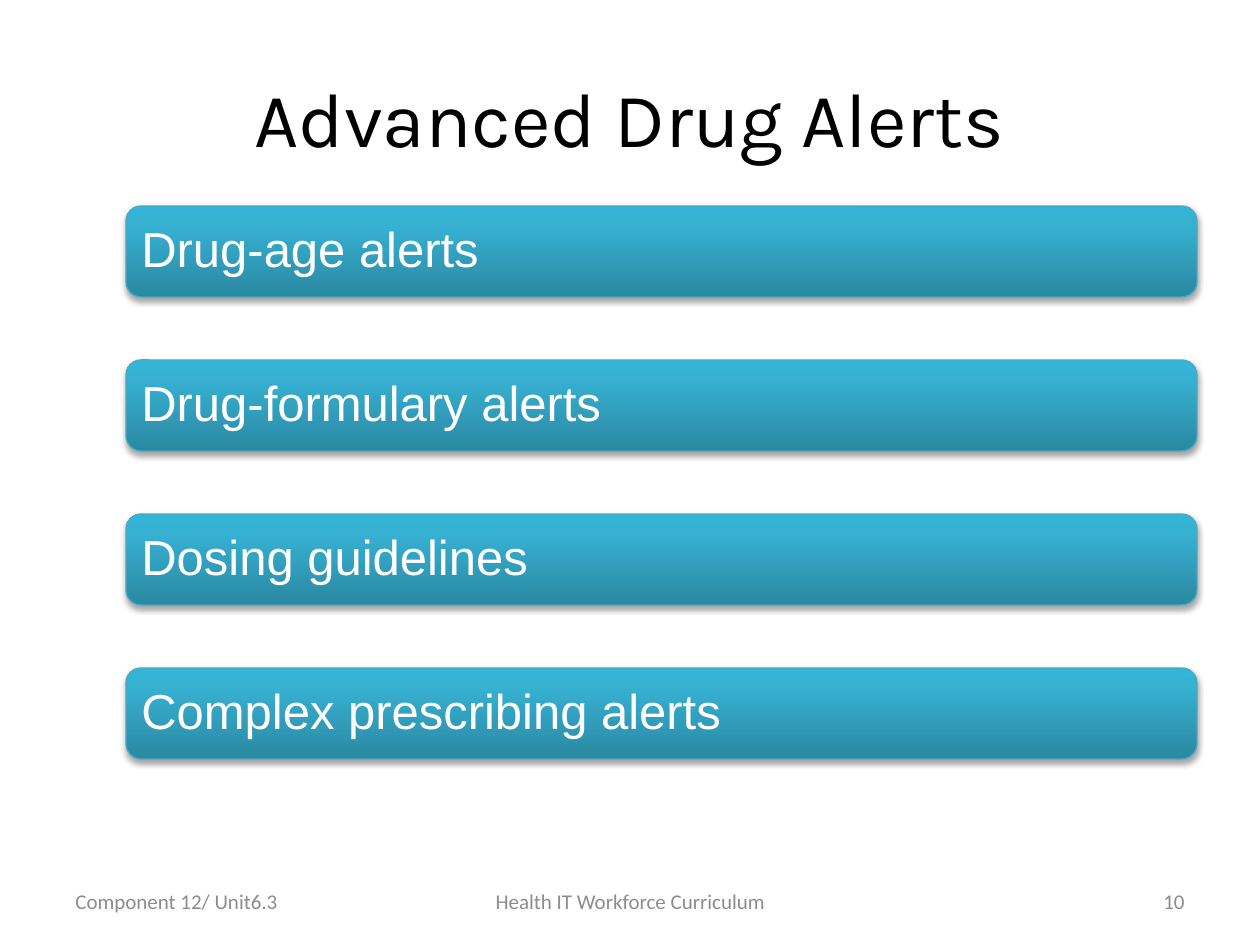
from dataclasses import dataclass

from lxml import etree
from pptx import Presentation
from pptx import util as u
from pptx.dml.color import RGBColor
from pptx.enum import shapes, text
from pptx.oxml.ns import qn

PX_PER_INCH = 126
COLORS = {
    "title": "000000", "bar_text": "FFFFFF", "footer": "8C8C8C",
    "bar_line": "46AAC5", "shadow": "000000",
    "bar_bottom": "2A88A2", "bar_middle": "37B1D2", "bar_top": "34B4D6",
}
BAR_STOPS = ((0, "bar_bottom"), (80, "bar_middle"), (100, "bar_top"))
ALERTS = ("Drug-age alerts", "Drug-formulary alerts",
          "Dosing guidelines", "Complex prescribing alerts")
BAR_LEFT, BAR_TOP, BAR_WIDTH, BAR_HEIGHT, BAR_PITCH = 126, 206, 1071, 91, 154
BAR_INSET = 11
FOOTER_TOP, FOOTER_HEIGHT = 876, 50


@dataclass(frozen=True)
class Footer:
    words: str
    left: int
    width: int
    align: text.PP_ALIGN


FOOTERS = (
    Footer("Component 12/ Unit6.3", 63, 294, text.PP_ALIGN.LEFT),
    Footer("10", 903, 294, text.PP_ALIGN.RIGHT),
    Footer("Health IT Workforce Curriculum", 431, 399, text.PP_ALIGN.CENTER),
)


def px(count: int) -> u.Emu:
    return u.Emu(round(count * 914400 / PX_PER_INCH))


def write(box, words: str, font: str, size: int, color: str, align):
    """Put one middle-anchored line of text in a shape; return its paragraph."""
    frame = box.text_frame
    frame.word_wrap = True
    frame.auto_size = text.MSO_AUTO_SIZE.NONE
    frame.vertical_anchor = text.MSO_ANCHOR.MIDDLE
    para = frame.paragraphs[0]
    para.alignment = align
    span = para.add_run()
    span.text = words
    span.font.name = font
    span.font.size = u.Pt(size)
    span.font.color.rgb = RGBColor.from_string(COLORS[color])
    return para


def add_color(parent, color: str):
    return etree.SubElement(parent, qn("a:srgbClr"), val=COLORS[color])


def shade(bar) -> None:
    """Give a bar its three-stop gradient and soft shadow."""
    bar.fill.gradient()
    bar.fill.gradient_angle = 90
    properties = bar.element.spPr
    stops = properties.find(qn("a:gradFill")).find(qn("a:gsLst"))
    for stop in list(stops):
        stops.remove(stop)
    for percent, color in BAR_STOPS:
        add_color(etree.SubElement(stops, qn("a:gs"), pos=str(percent * 1000)), color)

    bar.shadow.inherit = False
    shadow = etree.SubElement(
        properties.find(qn("a:effectLst")), qn("a:outerShdw"),
        blurRad="40000", dist="23000", dir="5400000", rotWithShape="0")
    etree.SubElement(add_color(shadow, "shadow"), qn("a:alpha"), val="35000")


def add_bar(page, words: str, top: int) -> None:
    bar = page.shapes.add_shape(
        shapes.MSO_SHAPE.ROUNDED_RECTANGLE,
        px(BAR_LEFT), px(top), px(BAR_WIDTH), px(BAR_HEIGHT))
    shade(bar)
    bar.line.color.rgb = RGBColor.from_string(COLORS["bar_line"])
    bar.line.width = u.Pt(0.75)
    para = write(bar, words, "Arial", 28, "bar_text", text.PP_ALIGN.LEFT)
    para.line_spacing = 0.9
    frame = bar.text_frame
    frame.margin_left = frame.margin_right = px(BAR_INSET)
    frame.margin_top = frame.margin_bottom = px(BAR_INSET)


def add_footer(page, footer: Footer) -> None:
    box = page.shapes.add_textbox(
        px(footer.left), px(FOOTER_TOP), px(footer.width), px(FOOTER_HEIGHT))
    write(box, footer.words, "Calibri", 12, "footer", footer.align)


def main() -> None:
    deck = Presentation()
    deck.slide_width, deck.slide_height = px(1260), px(945)
    page = deck.slides.add_slide(deck.slide_layouts.get_by_name("Title Only"))

    title = page.shapes.title
    title.left, title.top, title.width, title.height = px(63), px(38), px(1134), px(158)
    write(title, "Advanced Drug Alerts", "Karla", 44, "title", text.PP_ALIGN.CENTER)

    for index, words in enumerate(ALERTS):
        add_bar(page, words, BAR_TOP + index * BAR_PITCH)
    for footer in FOOTERS:
        add_footer(page, footer)
    deck.save("out.pptx")


if __name__ == "__main__":
    main()
